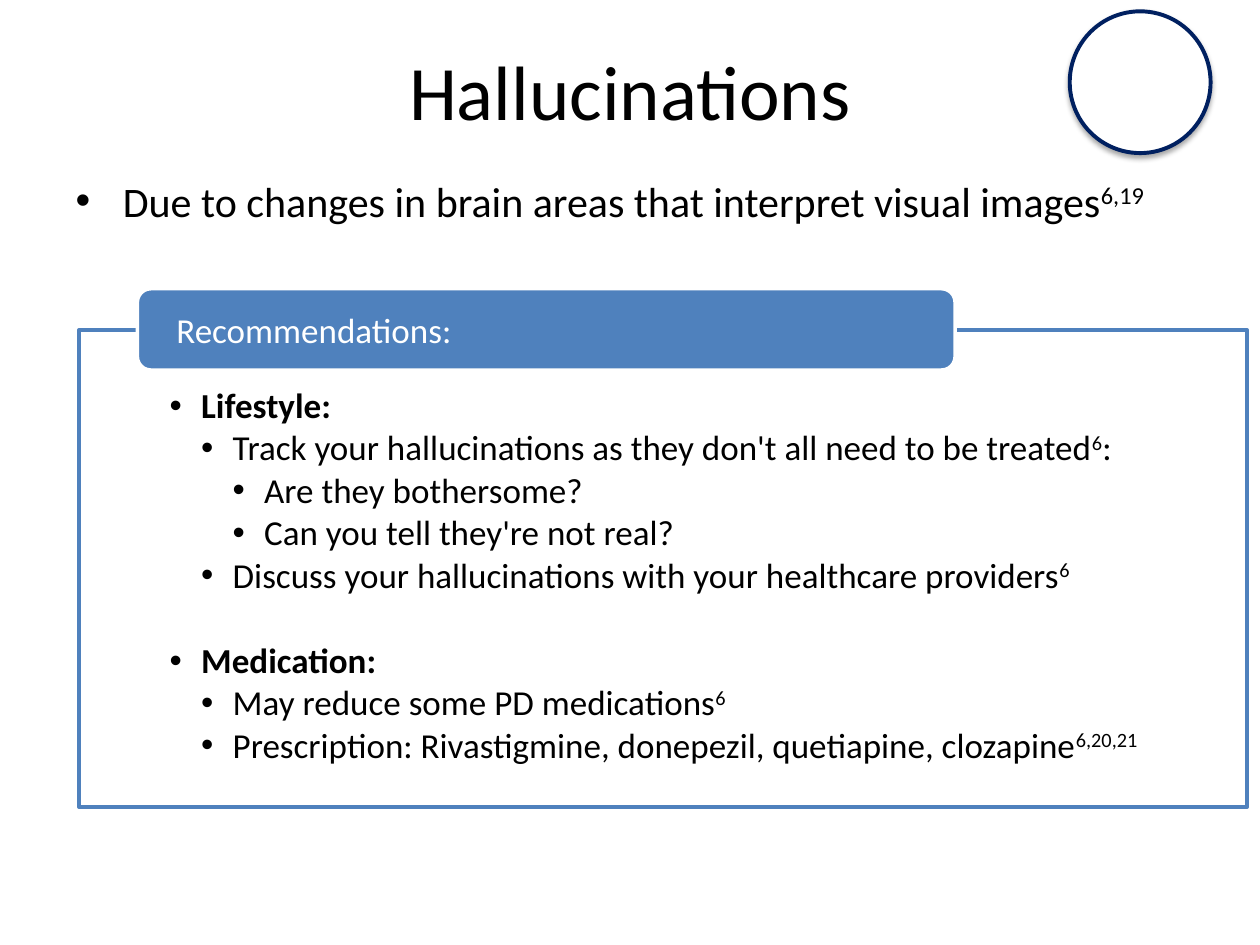
from lxml import etree
from pptx import Presentation
from pptx.dml.color import RGBColor
from pptx.enum.shapes import MSO_SHAPE
from pptx.enum.text import MSO_ANCHOR, MSO_AUTO_SIZE, PP_ALIGN
from pptx.oxml.ns import qn
from pptx.util import Pt

OVAL, RECT, ROUND = MSO_SHAPE.OVAL, MSO_SHAPE.RECTANGLE, MSO_SHAPE.ROUNDED_RECTANGLE
TOP, MIDDLE = MSO_ANCHOR.TOP, MSO_ANCHOR.MIDDLE
LEFT, CENTER = PP_ALIGN.LEFT, PP_ALIGN.CENTER
NO_FIT = MSO_AUTO_SIZE.NONE

BLACK = RGBColor(0, 0, 0)
WHITE = RGBColor(255, 255, 255)
BLUE = RGBColor(0x4F, 0x81, 0xBD)
NAVY = RGBColor(0, 0x20, 0x60)
FONT = "Calibri"

# Content: each line is a list of pieces, every second piece is superscript
TITLE = "Hallucinations"
INTRO = ["Due to changes in brain areas that interpret visual images", "6,19"]
LABEL = "Recommendations:"
GROUPS = [
    [
        (1, ["Lifestyle:"]),
        (2, ["Track your hallucinations as they don't all need to be treated", "6", ":"]),
        (3, ["Are they bothersome?"]),
        (3, ["Can you tell they're not real?"]),
        (2, ["Discuss your hallucinations with your healthcare providers", "6"]),
    ],
    [
        (1, ["Medication:"]),
        (2, ["May reduce some PD medications", "6"]),
        (2, ["Prescription: Rivastigmine, donepezil, quetiapine, clozapine", "6,20,21"]),
    ],
]
STEP, GAP, BREAK = 18, 2.6, 27.2


def style(run, size, color=BLACK, bold=False):
    font = run.font
    font.name, font.size, font.bold = FONT, Pt(size), bold
    font.color.rgb = color


def write(para, parts, size, bold=False):
    for i, part in enumerate(parts):
        run = para.add_run()
        run.text = part
        style(run, size, bold=bold)
        if i % 2:
            run.font._element.set("baseline", "30000")


def bullet(para, left, hang):
    props = para._p.get_or_add_pPr()
    props.set("marL", str(Pt(left)))
    props.set("indent", str(-Pt(hang)))
    etree.SubElement(props, qn("a:buFont")).set("typeface", "Arial")
    etree.SubElement(props, qn("a:buChar")).set("char", "•")


def place(shape, left, top, width, height):
    shape.left, shape.top = Pt(left), Pt(top)
    shape.width, shape.height = Pt(width), Pt(height)


def draw(kind, box, fill, line, weight):
    shape = slide.shapes.add_shape(kind, *map(Pt, box))
    shape.shadow.inherit = False
    shape.fill.solid()
    shape.fill.fore_color.rgb = fill
    shape.line.color.rgb = line
    shape.line.width = Pt(weight)
    return shape


def setup(shape, anchor, side, top=0, bottom=0):
    frame = shape.text_frame
    frame.word_wrap = True
    frame.vertical_anchor = anchor
    frame.margin_left = frame.margin_right = Pt(side)
    frame.margin_top, frame.margin_bottom = Pt(top), Pt(bottom)
    return frame


deck = Presentation()
deck.slide_width, deck.slide_height = Pt(720), Pt(540)
slide = deck.slides.add_slide(deck.slide_layouts[1])

# Title
title = slide.shapes.title
place(title, 36, 6.5, 648, 90)
title.text_frame.text = TITLE
title.text_frame.vertical_anchor = MIDDLE
head = title.text_frame.paragraphs[0]
head.alignment = CENTER
style(head.runs[0], 44)

# Opening bullet
body = slide.placeholders[1]
place(body, 36, 96.5, 648, 36)
body.text_frame.auto_size = NO_FIT
intro = body.text_frame.paragraphs[0]
intro.space_before = Pt(0)
bullet(intro, 27, 27)
write(intro, INTRO, 24)

# Circle with a soft shadow
ring = draw(OVAL, (611.3, 6.5, 80.5, 81), WHITE, NAVY, 2.25)
effects = ring._element.spPr.find(qn("a:effectLst"))
shade = etree.SubElement(effects, qn("a:outerShdw"), blurRad=str(Pt(3.1)),
                         dist=str(Pt(1.8)), dir="5400000", rotWithShape="0")
tint = etree.SubElement(shade, qn("a:srgbClr"), val="000000")
etree.SubElement(tint, qn("a:alpha"), val="35000")

# Framed list
panel = draw(RECT, (45.2, 188.6, 667.5, 272.6), WHITE, BLUE, 2)
frame = setup(panel, TOP, 51.8, 33.3, 11.5)
para = frame.paragraphs[0]
for g, group in enumerate(GROUPS):
    for i, (level, parts) in enumerate(group):
        if g or i:
            para = frame.add_paragraph()
        para.alignment = LEFT
        para.line_spacing = 0.9
        last = i == len(group) - 1 and g < len(GROUPS) - 1
        para.space_after = Pt(BREAK if last else GAP)
        bullet(para, STEP * level, STEP)
        para.level = level
        write(para, parts, 20, bold=level == 1)

# Label on the frame
label = draw(ROUND, (78.5, 165, 467.3, 46.5), BLUE, WHITE, 2)
name = setup(label, MIDDLE, 20)
name.text = LABEL
name.paragraphs[0].alignment = LEFT
style(name.paragraphs[0].runs[0], 20, WHITE)

deck.save("out.pptx")
